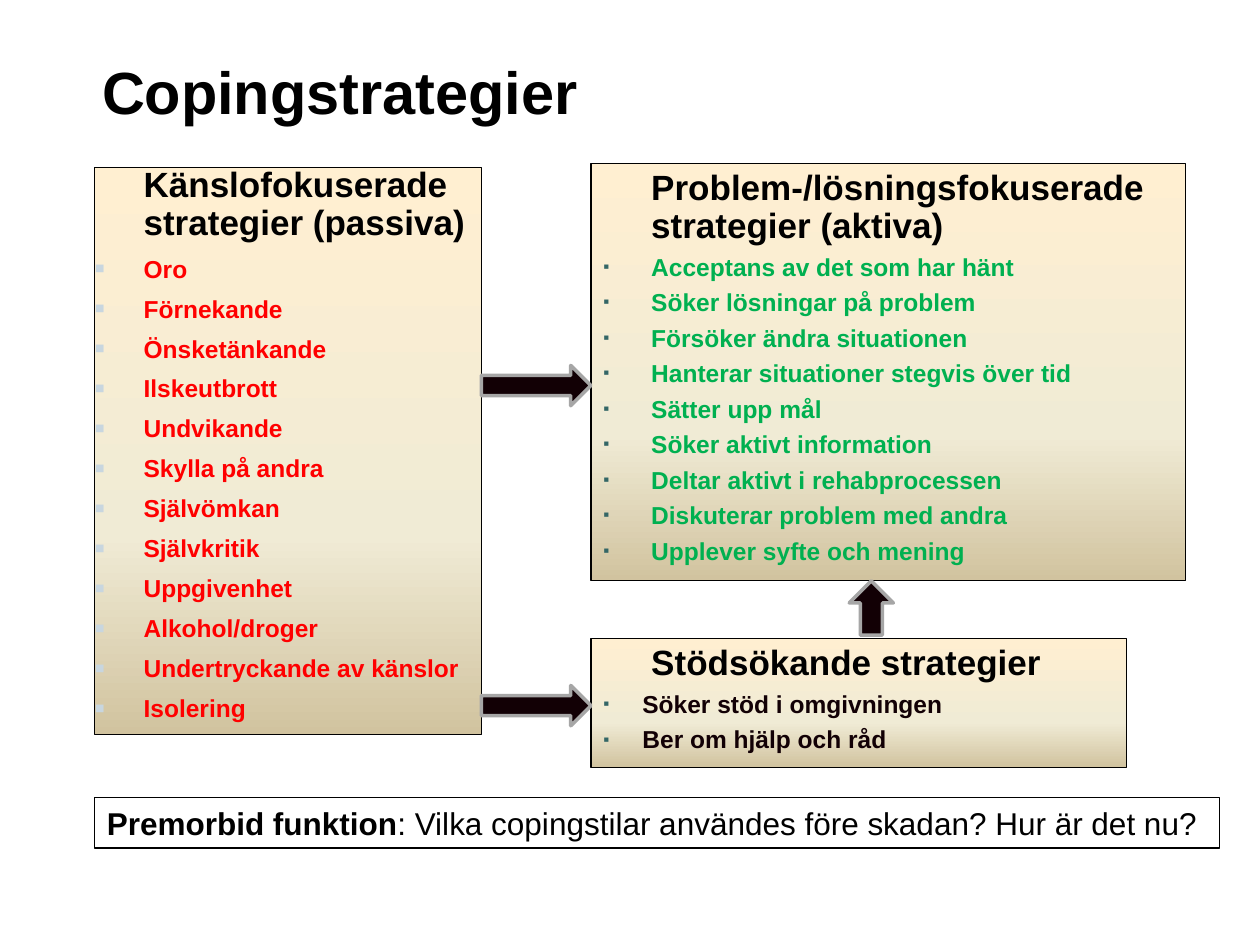
from copy import deepcopy
from dataclasses import dataclass

from lxml.etree import SubElement
from pptx import Presentation
from pptx.dml.color import RGBColor
from pptx.enum.shapes import MSO_SHAPE
from pptx.enum.text import MSO_ANCHOR
from pptx.oxml.ns import qn
from pptx.util import Inches, Pt


@dataclass(frozen=True)
class Theme:
    font: str = "Arial"
    black: str = "000000"
    dark: str = "120005"
    red: str = "FF0000"
    green: str = "00B050"
    arrow_line: str = "A6A6A6"
    pale_bullet: str = "C8D6DF"
    teal_bullet: str = "336666"
    gradient: tuple = ((0, "FFEFD1"), (0.65, "F0EBD5"), (1, "D1C39F"))
    title_size: int = 34
    heading_size: int = 20
    footer_size: int = 18
    item_size: int = 14


@dataclass(frozen=True)
class ListStyle:
    color: str
    bullet_color: str
    bullet_percent: int
    heading_indent: float
    item_indent: float
    space_before: float
    inset: tuple


THEME = Theme()
ROOMY = (0.1, 0.05, 0.1, 0.05)
FLUSH = (0, 0, 0, 0)
PASSIVE = ListStyle(THEME.red, THEME.pale_bullet, 126, 0.39, 0.39, 6, FLUSH)
ACTIVE = ListStyle(THEME.green, THEME.teal_bullet, 70, 0.38, 0.38, 3.5, ROOMY)
SUPPORT = ListStyle(THEME.dark, THEME.teal_bullet, 70, 0.38, 0.31, 3.5, ROOMY)


def set_attributes(target, values):
    for name, value in values.items():
        setattr(target, name, value)


def add_run(paragraph, text, size, color=THEME.black, bold=True):
    run = paragraph.add_run()
    run.text = text
    set_attributes(run.font, {"name": THEME.font, "size": Pt(size), "bold": bold})
    run.font.color.rgb = RGBColor.from_string(color)


def format_frame(frame, inset, anchor, wrap=True):
    left, top, right, bottom = map(Inches, inset)
    set_attributes(frame, {
        "margin_left": left, "margin_top": top,
        "margin_right": right, "margin_bottom": bottom,
        "vertical_anchor": anchor, "word_wrap": wrap,
    })


def add_outlined_shape(slide, kind, box, line_color, line_width):
    shape = slide.shapes.add_shape(kind, *map(Inches, box))
    shape.shadow.inherit = False
    shape.line.color.rgb = RGBColor.from_string(line_color)
    shape.line.width = Pt(line_width)
    return shape


def fill_gradient(shape):
    shape.fill.gradient()
    shape.fill.gradient_angle = 270
    stop_list = shape.element.spPr.find(qn("a:gradFill")).find(qn("a:gsLst"))
    stop_list.append(deepcopy(stop_list[0]))
    for stop, (position, color) in zip(shape.fill.gradient_stops, THEME.gradient):
        stop.position = position
        stop.color.rgb = RGBColor.from_string(color)


def add_bullet(paragraph, style):
    properties = paragraph._p.get_or_add_pPr()
    properties.set("marL", str(Inches(style.item_indent)))
    properties.set("indent", str(-Inches(style.item_indent)))
    color = SubElement(properties, qn("a:buClr"))
    SubElement(color, qn("a:srgbClr"), val=style.bullet_color)
    SubElement(properties, qn("a:buSzPct"), val=str(style.bullet_percent * 1000))
    SubElement(properties, qn("a:buFont"), typeface=THEME.font)
    SubElement(properties, qn("a:buChar"), char="▪")


def add_title(slide, box, text):
    frame = slide.shapes.add_textbox(*map(Inches, box)).text_frame
    format_frame(frame, FLUSH, MSO_ANCHOR.MIDDLE)
    paragraph = frame.paragraphs[0]
    paragraph.line_spacing = 0.9
    add_run(paragraph, text, THEME.title_size)


def add_strategy_box(slide, box, heading, items, style):
    shape = add_outlined_shape(slide, MSO_SHAPE.RECTANGLE, box, THEME.black, 0.75)
    fill_gradient(shape)
    frame = shape.text_frame
    format_frame(frame, style.inset, MSO_ANCHOR.TOP)
    paragraph = frame.paragraphs[0]
    paragraph._p.get_or_add_pPr().set("marL", str(Inches(style.heading_indent)))
    set_attributes(paragraph, {"line_spacing": 0.9, "alignment": 1})
    add_run(paragraph, heading, THEME.heading_size)
    for item in items:
        paragraph = frame.add_paragraph()
        add_bullet(paragraph, style)
        set_attributes(paragraph, {"space_before": Pt(style.space_before), "alignment": 1})
        add_run(paragraph, item, THEME.item_size, style.color)


def add_arrow(slide, box, rotation=0):
    arrow = add_outlined_shape(slide, MSO_SHAPE.RIGHT_ARROW, box, THEME.arrow_line, 2)
    arrow.fill.solid()
    arrow.fill.fore_color.rgb = RGBColor.from_string(THEME.dark)
    arrow.rotation = rotation


def add_footer(slide, box, term, question):
    shape = add_outlined_shape(slide, MSO_SHAPE.RECTANGLE, box, THEME.black, 0.75)
    shape.fill.background()
    format_frame(shape.text_frame, ROOMY, MSO_ANCHOR.MIDDLE, wrap=False)
    paragraph = shape.text_frame.paragraphs[0]
    paragraph.alignment = 1
    add_run(paragraph, term, THEME.footer_size)
    add_run(paragraph, question, THEME.footer_size, bold=False)


def main():
    presentation = Presentation()
    set_attributes(presentation, {"slide_width": Inches(10), "slide_height": Inches(7.5)})
    slide = presentation.slides.add_slide(presentation.slide_layouts[6])
    add_title(slide, (0.81, 0.18, 8.39, 1.16), "Copingstrategier")
    add_strategy_box(
        slide, (0.75, 1.33, 3.07, 4.5), "Känslofokuserade strategier (passiva)",
        ["Oro", "Förnekande", "Önsketänkande", "Ilskeutbrott", "Undvikande",
         "Skylla på andra", "Självömkan", "Självkritik", "Uppgivenhet",
         "Alkohol/droger", "Undertryckande av känslor", "Isolering"], PASSIVE)
    add_strategy_box(
        slide, (4.69, 1.3, 4.72, 3.31), "Problem-/lösningsfokuserade strategier (aktiva)",
        ["Acceptans av det som har hänt", "Söker lösningar på problem",
         "Försöker ändra situationen", "Hanterar situationer stegvis över tid",
         "Sätter upp mål", "Söker aktivt information", "Deltar aktivt i rehabprocessen",
         "Diskuterar problem med andra", "Upplever syfte och mening"], ACTIVE)
    add_strategy_box(
        slide, (4.69, 5.07, 4.25, 1.02), "Stödsökande strategier",
        ["Söker stöd i omgivningen", "Ber om hjälp och råd"], SUPPORT)
    for top in (2.9, 5.44):
        add_arrow(slide, (3.82, top, 0.87, 0.32))
    add_arrow(slide, (6.7, 4.65, 0.43, 0.35), rotation=270)
    add_footer(slide, (0.75, 6.33, 8.93, 0.4), "Premorbid funktion",
               ": Vilka copingstilar användes före skadan? Hur är det nu?")
    presentation.save("out.pptx")


if __name__ == "__main__":
    main()
